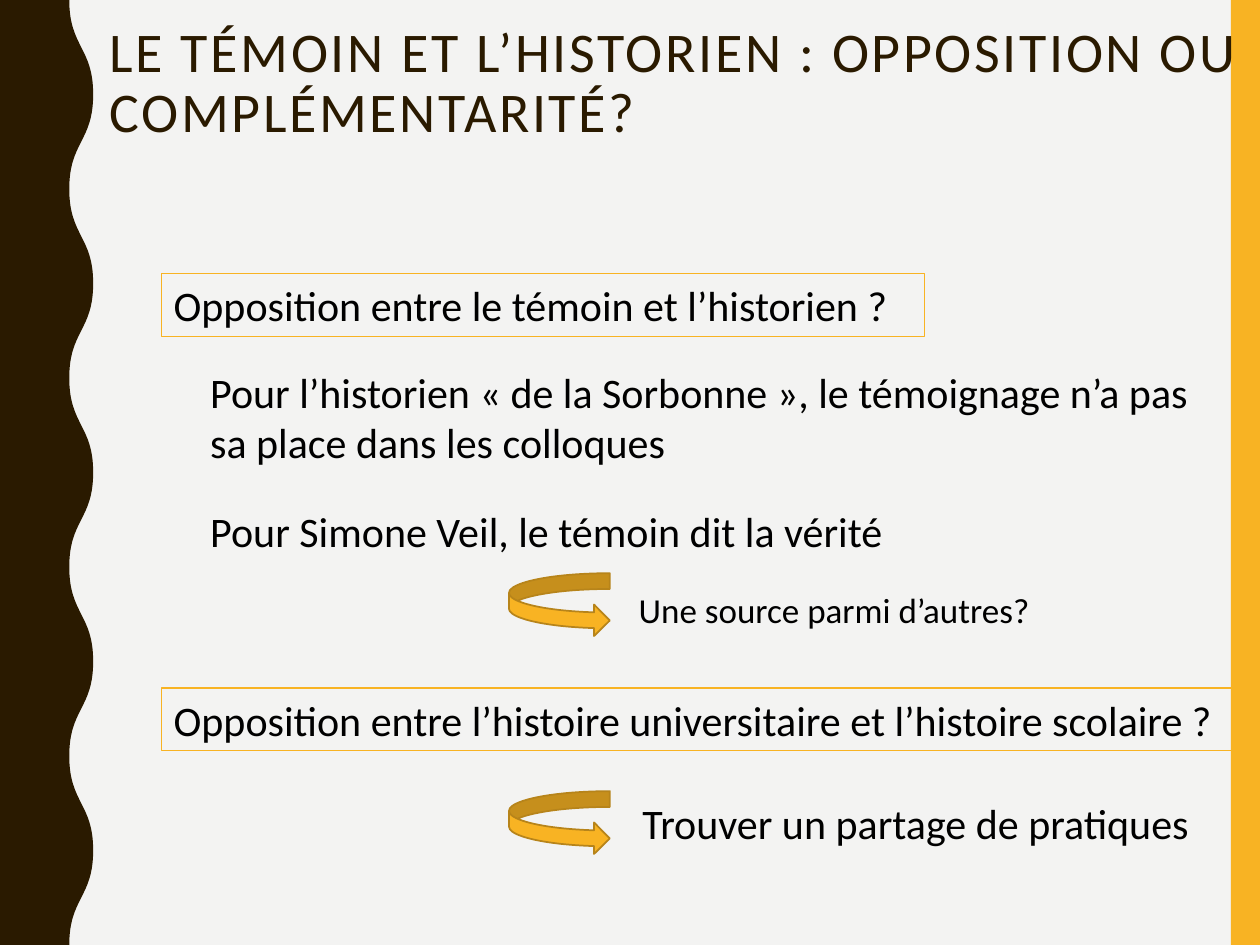
"""Build a slide on the opposition between witness and historian."""
from dataclasses import dataclass

import lxml.etree
import pptx
import pptx.dml.color
import pptx.enum.shapes
import pptx.enum.text
import pptx.oxml.ns
import pptx.util

EMU_PER_PX = 9144
SLIDE_WIDTH, SLIDE_HEIGHT = 1000, 750
WAVE_EDGES = (55, 74)
WAVE_STEP = 75


@dataclass(frozen=True)
class Theme:
    font: str = "Calibri"
    background: str = "F3F3F2"
    accent: str = "F8B323"
    arrow_line: str = "B7841A"
    dark: str = "2A1A00"
    text: str = "000000"
    title_size: int = 32
    body_size: int = 24
    small_size: int = 20


@dataclass(frozen=True)
class Label:
    text: str
    left: int
    top: int
    width: int
    height: int = 50
    size: int = Theme.body_size
    framed: bool = False
    wrap: bool = False


@dataclass(frozen=True)
class Arrow:
    top: int
    left: int = 404
    width: int = 80
    height: int = 50


THEME = Theme()
SHAPES = pptx.enum.shapes.MSO_SHAPE
TITLE = "LE TÉMOIN ET L’HISTORIEN : OPPOSITION OU COMPLÉMENTARITÉ?"
LABELS = [
    Label("Opposition entre le témoin et l’historien ?", 128, 217, 606, framed=True),
    Label("Pour l’historien « de la Sorbonne », le témoignage n’a pas sa place dans les colloques",
          157, 286, 816, 91, wrap=True),
    Label("Pour Simone Veil, le témoin dit la vérité", 157, 396, 569, wrap=True),
    Label("Opposition entre l’histoire universitaire et l’histoire scolaire ?",
          128, 546, 867, framed=True),
    Label("Une source parmi d’autres?", 497, 462, 332, 44, THEME.small_size),
    Label("Trouver un partage de pratiques", 500, 628, 459),
]
ARROWS = [Arrow(455), Arrow(628)]


def px(*lengths: int) -> list[pptx.util.Emu]:
    return [pptx.util.Emu(length * EMU_PER_PX) for length in lengths]


def rgb(value: str) -> pptx.dml.color.RGBColor:
    return pptx.dml.color.RGBColor.from_string(value)


def paint(shape, fill: str | None, line: str | None = None, weight: float = 1) -> None:
    shape.shadow.inherit = False
    if fill:
        shape.fill.solid()
        shape.fill.fore_color.rgb = rgb(fill)
    else:
        shape.fill.background()
    if line:
        shape.line.color.rgb = rgb(line)
        shape.line.width = pptx.util.Pt(weight)
    else:
        shape.line.fill.background()


def write(box, text: str, size: int, color: str, wrap: bool):
    frame = box.text_frame
    frame.word_wrap = wrap
    frame.vertical_anchor = pptx.enum.text.MSO_ANCHOR.TOP
    para = frame.paragraphs[0]
    para.alignment = pptx.enum.text.PP_ALIGN.LEFT
    span = para.add_run()
    span.text = text
    span.font.name = THEME.font
    span.font.size = pptx.util.Pt(size)
    span.font.color.rgb = rgb(color)
    return para, span


def draw_bar(page) -> None:
    bar = page.shapes.add_shape(SHAPES.RECTANGLE, *px(977, 0, 23, SLIDE_HEIGHT))
    paint(bar, THEME.accent)


def draw_wave(page) -> None:
    bends = SLIDE_HEIGHT // WAVE_STEP
    nodes = [tuple(px(WAVE_EDGES[bend % 2], bend * WAVE_STEP)) for bend in range(bends + 1)]
    corners = [tuple(px(0, SLIDE_HEIGHT)), (0, 0)]
    builder = page.shapes.build_freeform(*nodes[0])
    builder.add_line_segments(nodes[1:] + corners, close=True)
    wave = builder.convert_to_shape()
    paint(wave, THEME.dark)
    qualify = pptx.oxml.ns.qn
    segments = list(wave._element.iter(qualify("a:lnTo")))
    for segment, (x1, y1), (x2, y2) in zip(segments, nodes, nodes[1:]):
        curve = lxml.etree.Element(qualify("a:cubicBezTo"))
        middle = (y1 + y2) // 2
        for x, y in ((x1, middle), (x2, middle), (x2, y2)):
            lxml.etree.SubElement(curve, qualify("a:pt"), x=str(x), y=str(y))
        segment.getparent().replace(segment, curve)


def draw_title(page) -> None:
    box = page.shapes.add_textbox(*px(77, 14, 923, 104))
    para, span = write(box, TITLE, THEME.title_size, THEME.dark, True)
    para.line_spacing = 0.9
    span.font._element.set("spc", "150")


def draw_label(page, label: Label) -> None:
    bounds = px(label.left, label.top, label.width, label.height)
    if label.framed:
        box = page.shapes.add_shape(SHAPES.RECTANGLE, *bounds)
        paint(box, None, THEME.accent, 0.75)
    else:
        box = page.shapes.add_textbox(*bounds)
    write(box, label.text, label.size, THEME.text, label.wrap)
    box.text_frame.auto_size = pptx.enum.text.MSO_AUTO_SIZE.SHAPE_TO_FIT_TEXT


def draw_arrow(page, arrow: Arrow) -> None:
    bounds = px(arrow.left, arrow.top, arrow.width, arrow.height)
    paint(page.shapes.add_shape(SHAPES.CURVED_RIGHT_ARROW, *bounds),
          THEME.accent, THEME.arrow_line)


def main() -> None:
    deck = pptx.Presentation()
    deck.slide_width, deck.slide_height = px(SLIDE_WIDTH, SLIDE_HEIGHT)
    page = deck.slides.add_slide(deck.slide_layouts[6])
    page.background.fill.solid()
    page.background.fill.fore_color.rgb = rgb(THEME.background)
    draw_bar(page)
    draw_wave(page)
    draw_title(page)
    for label in LABELS:
        draw_label(page, label)
    for arrow in ARROWS:
        draw_arrow(page, arrow)
    deck.save("out.pptx")


if __name__ == "__main__":
    main()
